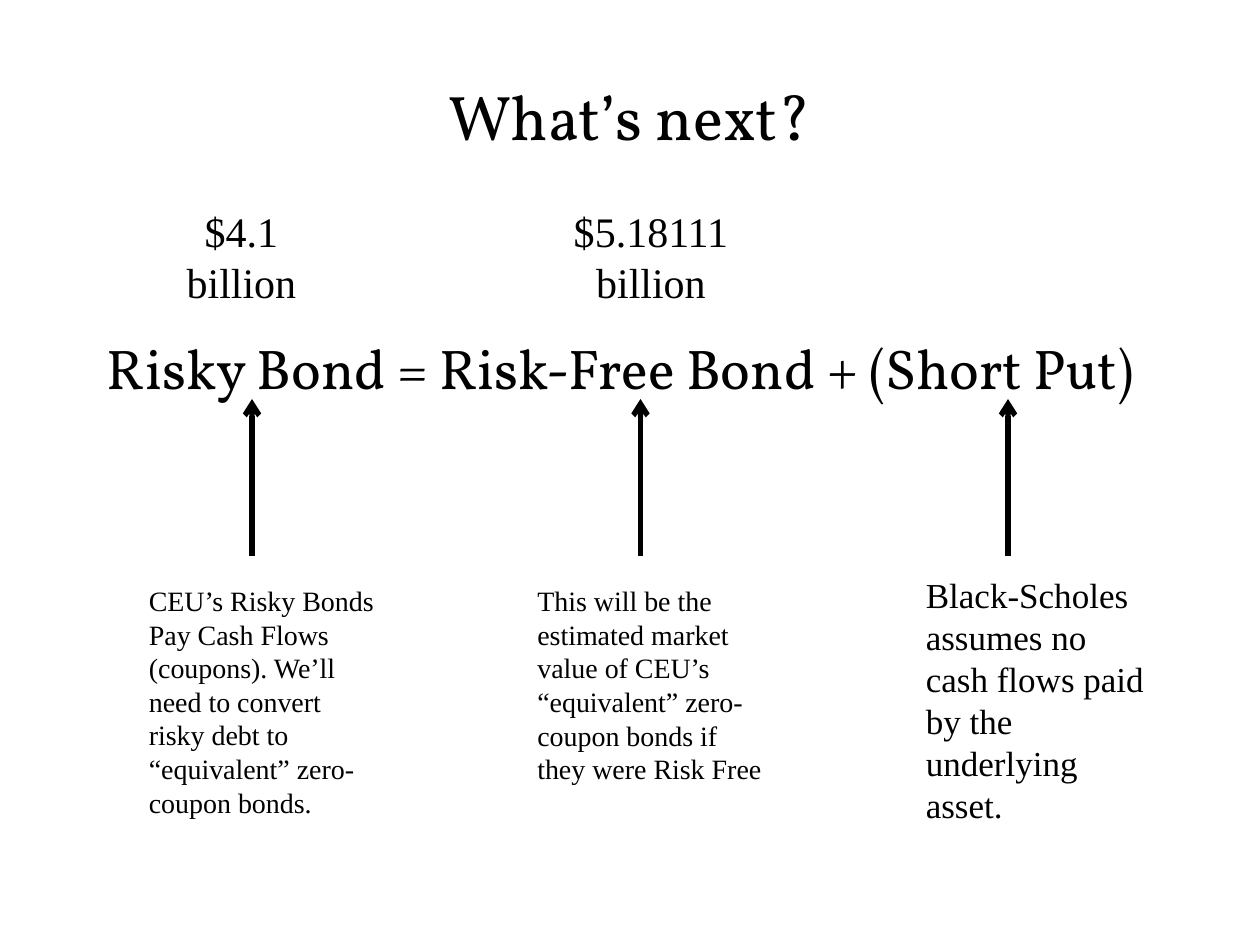
from typing import NamedTuple

from lxml import etree
from pptx import Presentation
from pptx import util as u
from pptx.dml.color import RGBColor
from pptx.enum import shapes, text
from pptx.oxml.ns import qn

# Grid of 120 columns by 90 rows, twelve cells to the inch
COLUMNS, ROWS = 120, 90
CELL = u.Inches(1) // 12
COLORS = {"ink": "000000", "background": "FFFFFF"}
HEADING_FONT, BODY_FONT = "Vollkorn", "Times New Roman"
ARROW_BOTTOM, ARROW_TOP = 53, 38


class Box(NamedTuple):
    column: int
    row: int
    width: int
    height: int


class Note(NamedTuple):
    words: str
    box: Box
    size: int
    arrow_column: int


class Amount(NamedTuple):
    words: str
    box: Box


NOTES = [
    Note("CEU’s Risky Bonds Pay Cash Flows (coupons). We’ll need to convert "
         "risky debt to “equivalent” zero-coupon bonds.", Box(13, 55, 24, 24), 16, 24),
    Note("This will be the estimated market value of CEU’s “equivalent” "
         "zero-coupon bonds if they were Risk Free", Box(50, 55, 24, 21), 16, 61),
    Note("Black-Scholes assumes no cash flows paid by the underlying asset.",
         Box(87, 54, 24, 25), 20, 96),
]
AMOUNTS = [
    Amount("$4.1 billion", Box(14, 19, 18, 11)),
    Amount("$5.18111 billion", Box(53, 19, 18, 11)),
]


def add_text(slide, words: str, box: Box, *, size: int, font: str = BODY_FONT,
             align=text.PP_ALIGN.LEFT, anchor=text.MSO_ANCHOR.TOP) -> None:
    shape = slide.shapes.add_textbox(*(value * CELL for value in box))
    frame = shape.text_frame
    frame.word_wrap = True
    frame.vertical_anchor = anchor
    paragraph = frame.paragraphs[0]
    paragraph.alignment = align
    run = paragraph.add_run()
    run.text = words
    run.font.name = font
    run.font.size = u.Pt(size)
    run.font.color.rgb = RGBColor.from_string(COLORS["ink"])


def add_arrow(slide, column: int) -> None:
    """Draw an upward arrow from a note to its term in the equation."""
    arrow = slide.shapes.add_connector(
        shapes.MSO_CONNECTOR.STRAIGHT, column * CELL, ARROW_BOTTOM * CELL,
        column * CELL, ARROW_TOP * CELL)
    arrow.line.width = u.Pt(3)
    arrow.line.color.rgb = RGBColor.from_string(COLORS["ink"])
    etree.SubElement(arrow.line._get_or_add_ln(), qn("a:tailEnd"), type="arrow")
    etree.SubElement(arrow._element.spPr, qn("a:effectLst"))


def main() -> None:
    presentation = Presentation()
    presentation.slide_width = COLUMNS * CELL
    presentation.slide_height = ROWS * CELL
    slide = presentation.slides.add_slide(presentation.slide_layouts[6])
    fill = slide.background.fill
    fill.solid()
    fill.fore_color.rgb = RGBColor.from_string(COLORS["background"])

    # Title and equation
    add_text(slide, "What’s next?", Box(9, 5, 102, 12), size=36, font=HEADING_FONT,
             align=text.PP_ALIGN.CENTER, anchor=text.MSO_ANCHOR.MIDDLE)
    add_text(slide, "Risky Bond = Risk-Free Bond + (Short Put)", Box(9, 30, 106, 10),
             size=32, font=HEADING_FONT, anchor=text.MSO_ANCHOR.MIDDLE)

    # Explanations below, each pointing at its term
    for note in NOTES:
        add_text(slide, note.words, note.box, size=note.size)
        add_arrow(slide, note.arrow_column)

    # Known values above their terms
    for amount in AMOUNTS:
        add_text(slide, amount.words, amount.box, size=24, align=text.PP_ALIGN.CENTER)

    presentation.save("out.pptx")


if __name__ == "__main__":
    main()
